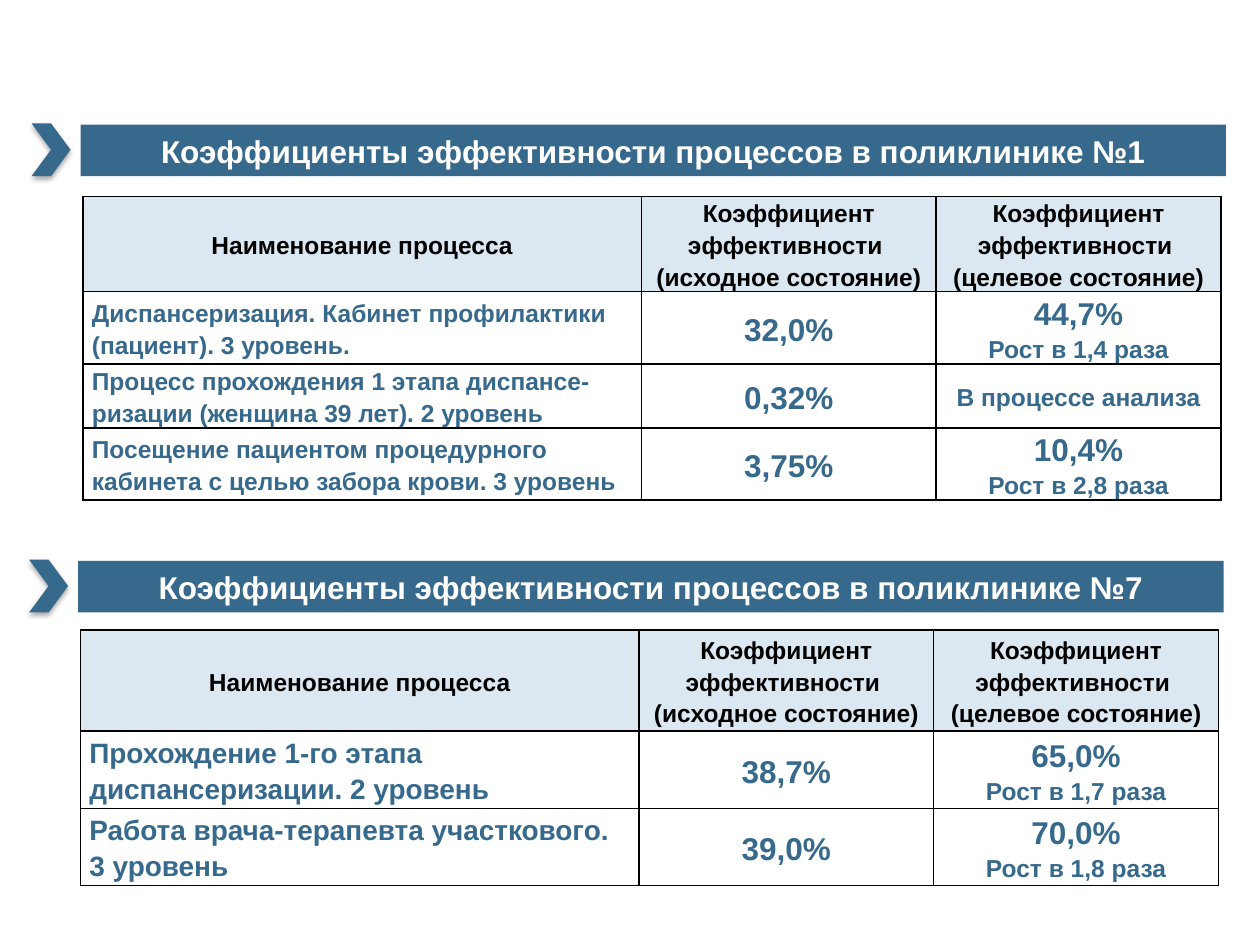
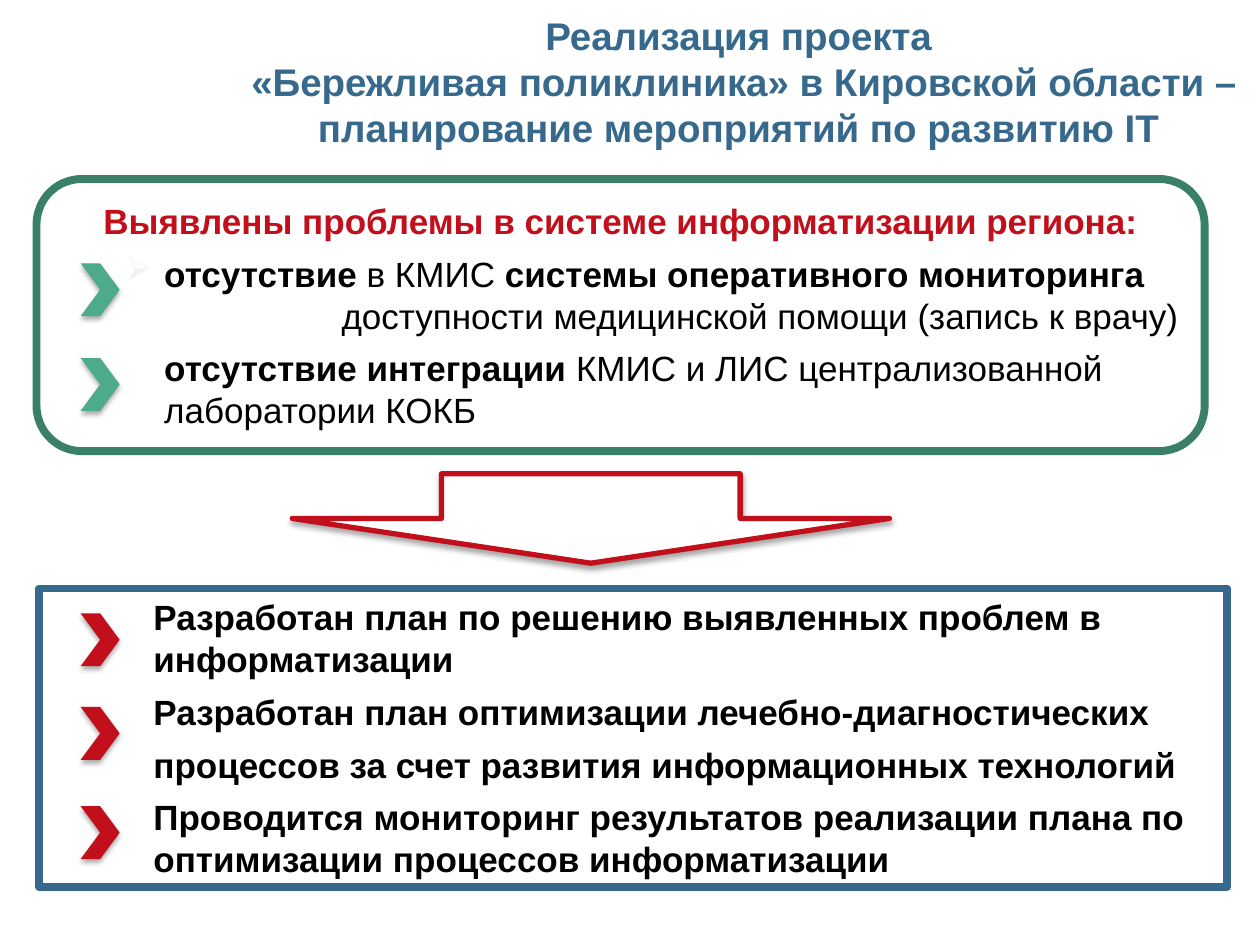
import pptx
import pptx.dml.color
import pptx.enum.shapes
import pptx.enum.text
import pptx.oxml
import pptx.oxml.ns
import pptx.util

Pt = pptx.util.Pt
SHAPE = pptx.enum.shapes.MSO_SHAPE
ALIGN = pptx.enum.text.PP_ALIGN
MIDDLE = pptx.enum.text.MSO_ANCHOR.MIDDLE
NAMESPACE = pptx.oxml.ns.nsdecls("a")

BLUE, PALE, GREEN, MINT = "36698C", "DBE8F1", "3A8067", "4DAB89"
RED, BLACK, WHITE, BULLET = "C10F1B", "000000", "FFFFFF", "F2F2F2"
COLUMNS = (319, 168.5, 162.7)
CHEVRON = (22.3, 30.2)
HANGING = 58.3


def color(value):
    """Turn a hex string into a colour."""
    return pptx.dml.color.RGBColor.from_string(value)


def add_xml(parent, markup):
    """Append a drawing element given as markup."""
    parent.append(pptx.oxml.parse_xml(markup.replace(" ", f" {NAMESPACE} ", 1)))


def add_span(para, text, size, ink, bold=True):
    """Add one run of text."""
    span = para.add_run()
    span.text = text
    span.font.name = "Arial"
    span.font.size = Pt(size)
    span.font.bold = bold
    span.font.color.rgb = color(ink)


def add_para(frame, first, align=ALIGN.LEFT, after=0, indent=0, bullet=None):
    """Start a paragraph, with a hanging bullet where one is given."""
    para = frame.paragraphs[0] if first else frame.add_paragraph()
    para.alignment = align
    para.space_after = Pt(after)
    if indent:
        properties = para._p.get_or_add_pPr()
        properties.set("marL", str(int(Pt(indent))))
        properties.set("indent", str(int(Pt(-22.5 if bullet else 0))))
        if bullet:
            add_xml(properties, f'<a:buClr ><a:srgbClr val="{BULLET}"/></a:buClr>')
            add_xml(properties, f'<a:buChar char="{bullet}"/>')
    return para


def add_block(page, kind, box, fill, line=None, weight=0, shadow=False):
    """Add a filled shape with an optional outline and soft shadow."""
    shape = page.shapes.add_shape(kind, *map(Pt, box))
    shape.shadow.inherit = False
    shape.fill.solid()
    shape.fill.fore_color.rgb = color(fill)
    if line:
        shape.line.color.rgb = color(line)
        shape.line.width = Pt(weight)
    else:
        shape.line.fill.background()
    if shadow:
        effects = shape._element.spPr.find(pptx.oxml.ns.qn("a:effectLst"))
        add_xml(effects, f'<a:outerShdw blurRad="{Pt(3)}" dist="{Pt(1.8)}" dir="5400000" rotWithShape="0">'
                f'<a:srgbClr val="{BLACK}"><a:alpha val="35000"/></a:srgbClr></a:outerShdw>')
    shape.text_frame.word_wrap = True
    shape.text_frame.vertical_anchor = MIDDLE
    return shape


def add_chevron(page, left, top, fill):
    """Add a chevron marker."""
    add_block(page, SHAPE.CHEVRON, (left, top, *CHEVRON), fill, shadow=True)


def fill_cell(cell, lines, align, ink, fill):
    """Fill a table cell with lines of (text, size) and draw its borders."""
    cell.fill.solid()
    cell.fill.fore_color.rgb = color(fill)
    cell.vertical_anchor = MIDDLE
    cell.margin_left = cell.margin_right = Pt(5)
    cell.margin_top = cell.margin_bottom = 0
    for index, (text, size) in enumerate(lines):
        para = add_para(cell.text_frame, index == 0, align)
        para.line_spacing = 1.15
        add_span(para, text, size, ink)
    properties = cell._tc.get_or_add_tcPr()
    for position, side in enumerate(("lnL", "lnR", "lnT", "lnB")):
        border = pptx.oxml.parse_xml(
            f'<a:{side} {NAMESPACE} w="{Pt(1)}"><a:solidFill><a:srgbClr val="{BLACK}"/></a:solidFill></a:{side}>')
        properties.insert(position, border)


def add_ratio_table(page, left, top, heights, processes):
    """Add a table of process names with initial and target ratios."""
    table = page.shapes.add_table(len(heights), len(COLUMNS), Pt(left), Pt(top),
                                  Pt(sum(COLUMNS)), Pt(sum(heights))).table
    table.first_row = table.horz_banding = False
    for column, width in zip(table.columns, COLUMNS):
        column.width = Pt(width)
    header = [[("Наименование процесса", 14)]]
    for state in ("исходное", "целевое"):
        header.append([("Коэффициент эффективности ", 14), (f"({state} состояние)", 14)])
    for row, (height, entries) in enumerate(zip(heights, [header, *processes])):
        table.rows[row].height = Pt(height)
        for column, lines in enumerate(entries):
            align = ALIGN.LEFT if row and not column else ALIGN.CENTER
            fill_cell(table.cell(row, column), lines, align, BLUE if row else BLACK, WHITE if row else PALE)


def add_clinic(page, left, top, number, gap, heights, processes):
    """Add a clinic's banner, chevron and table from the banner's corner."""
    add_ratio_table(page, left + 1.4, top + gap, heights, processes)
    banner = add_block(page, SHAPE.RECTANGLE, (left, top, 654.5, 29.5), BLUE)
    para = add_para(banner.text_frame, True, ALIGN.CENTER)
    add_span(para, f"Коэффициенты эффективности процессов в поликлинике №{number}", 18, WHITE)
    add_chevron(page, left - 28.1, top - 0.7, BLUE)


def build_ratios(page):
    """Build the slide with the ratios of two clinics."""
    add_clinic(page, 46.1, 71.2, 1, 41.1, (54.3, 41, 36.6, 41), [
        [[("Диспансеризация. Кабинет профилактики (пациент). 3 уровень.", 14)],
         [("32,0%", 18)], [("44,7%", 18), ("Рост в 1,4 раза", 14)]],
        [[("Процесс прохождения 1 этапа диспансе-ризации (женщина 39 лет). 2 уровень", 14)],
         [("0,32%", 18)], [("В процессе анализа", 14)]],
        [[("Посещение пациентом процедурного кабинета с целью забора крови. 3 уровень", 14)],
         [("3,75%", 18)], [("10,4%", 18), ("Рост в 2,8 раза", 14)]],
    ])
    add_clinic(page, 44.7, 320.5, 7, 39.5, (57.8, 44.1, 44.1), [
        [[("Прохождение 1-го этапа диспансеризации. 2 уровень", 16)],
         [("38,7%", 18)], [("65,0%", 18), ("Рост в 1,7 раза", 14)]],
        [[("Работа врача-терапевта участкового.", 16), ("3 уровень", 16)],
         [("39,0%", 18)], [("70,0%", 18), ("Рост в 1,8 раза", 14)]],
    ])


def add_title(page, box):
    """Add the slide title."""
    frame = page.shapes.add_textbox(*map(Pt, box)).text_frame
    frame.word_wrap = True
    frame.vertical_anchor = MIDDLE
    lines = ("Реализация проекта ",
             "«Бережливая поликлиника» в Кировской области – планирование мероприятий по развитию IT ")
    for index, text in enumerate(lines):
        add_span(add_para(frame, index == 0, ALIGN.CENTER), text, 22, BLUE)


def add_problems(page, left, top):
    """Add the rounded panel of problems with its chevrons."""
    panel = add_block(page, SHAPE.ROUNDED_RECTANGLE, (left, top, 667.5, 155.5), WHITE, GREEN, 4.5)
    frame = panel.text_frame
    heading = add_para(frame, True, ALIGN.CENTER, 6)
    add_span(heading, "Выявлены проблемы в системе информатизации региона:", 20, RED)
    monitoring = add_para(frame, False, indent=HANGING, bullet="➢")
    add_span(monitoring, "отсутствие", 20, BLACK)
    add_span(monitoring, " в КМИС ", 20, BLACK, False)
    add_span(monitoring, "системы оперативного мониторинга", 20, BLACK)
    access = add_para(frame, False, ALIGN.RIGHT, 6, HANGING)
    add_span(access, "доступности медицинской помощи (запись к врачу)", 20, BLACK, False)
    integration = add_para(frame, False, after=6, indent=HANGING)
    add_span(integration, "отсутствие интеграции", 20, BLACK)
    add_span(integration, " КМИС и ЛИС централизованной лаборатории КОКБ", 20, BLACK, False)
    for offset in (48.2, 102.3):
        add_chevron(page, left + 25.2, top + offset, MINT)


def add_plans(page, left, top):
    """Add the framed panel of plans with its chevrons."""
    panel = add_block(page, SHAPE.RECTANGLE, (left, top, 679, 170.6), WHITE, BLUE, 4.5)
    plans = ("Разработан план по решению выявленных проблем в информатизации",
             "Разработан план оптимизации лечебно-диагностических",
             "процессов за счет развития информационных технологий",
             "Проводится мониторинг результатов реализации плана по оптимизации процессов информатизации")
    for index, text in enumerate(plans):
        add_span(add_para(panel.text_frame, index == 0, after=6, indent=HANGING), text, 20, BLACK)
    for offset in (14.2, 67.7, 124.4):
        add_chevron(page, left + 23.8, top + offset, RED)


def build_plans(page):
    """Build the slide that leads from problems to plans."""
    add_plans(page, 22.3, 336.3)
    add_problems(page, 20.9, 102.3)
    add_title(page, (130.3, 2.9, 589.7, 87))
    add_block(page, SHAPE.DOWN_ARROW, (167, 270.7, 341.3, 51.1), WHITE, RED, 3, True)


def main():
    """Build and save the deck."""
    deck = pptx.Presentation()
    deck.slide_width, deck.slide_height = Pt(720), Pt(540)
    for build in (build_ratios, build_plans):
        build(deck.slides.add_slide(deck.slide_layouts[6]))
    deck.save("out.pptx")


if __name__ == "__main__":
    main()
